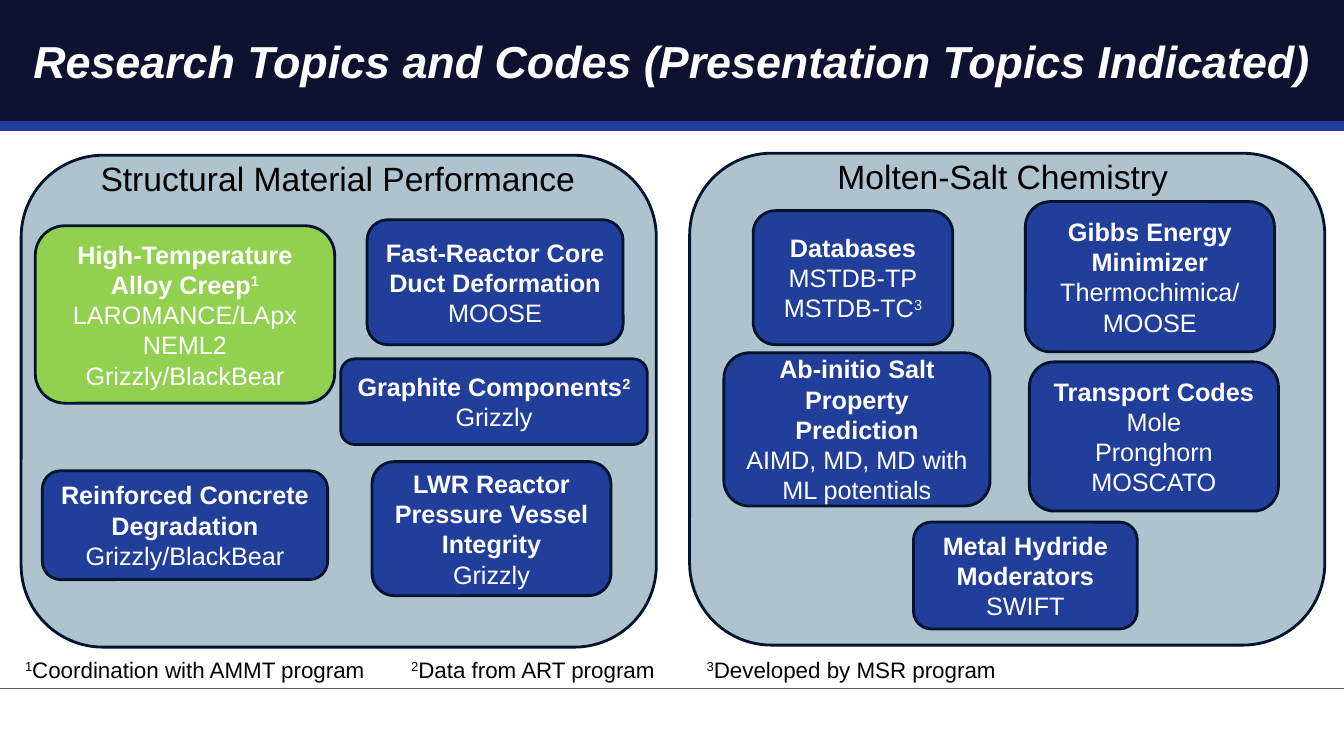
from dataclasses import dataclass
from typing import NamedTuple

from pptx import Presentation
from pptx.dml.color import RGBColor
from pptx.enum.shapes import MSO_CONNECTOR, MSO_SHAPE
from pptx.enum.text import MSO_ANCHOR, PP_ALIGN
from pptx.oxml.ns import qn
from pptx.shapes.autoshape import Shape
from pptx.slide import Slide
from pptx.text.text import TextFrame
from pptx.util import Inches, Pt
from lxml.etree import SubElement

# Grid of tenth-inch cells
CELL = Inches(0.1)
COLS, ROWS = 133.3, 75


@dataclass(frozen=True)
class Theme:
    font: str = "Arial"
    navy: str = "0E1130"
    blue: str = "213E9A"
    green: str = "92D050"
    panel: str = "AEC3CE"
    edge: str = "00152D"
    rule: str = "595959"
    white: str = "FFFFFF"
    black: str = "000000"
    title: int = 32
    head: int = 24
    body: int = 18
    note: int = 16


THEME = Theme()


class Area(NamedTuple):
    col: float
    row: float
    wide: float
    high: float


class Piece(NamedTuple):
    text: str
    bold: bool = False
    raised: bool = False


class Style(NamedTuple):
    size: int
    color: str
    align: PP_ALIGN = PP_ALIGN.LEFT
    slant: bool = False


Lines = list[list[Piece]]


@dataclass(frozen=True)
class Topic:
    area: Area
    lines: Lines
    fill: str = THEME.blue


@dataclass(frozen=True)
class Panel:
    area: Area
    label: Area
    name: str
    topics: list[Topic]


class Note(NamedTuple):
    mark: str
    text: str
    area: Area


def strong(text: str) -> Piece:
    return Piece(text, bold=True)


PANELS = [
    Panel(Area(2.1, 15.4, 63, 48.8), Area(8.3, 15.2, 50.4, 5), "Structural Material Performance", [
        Topic(Area(3.5, 22.4, 29.7, 17.6),
              [[strong("High-Temperature Alloy Creep"), Piece("1", True, True)],
               [Piece("LAROMANCE/LApx\nNEML2\nGrizzly/BlackBear")]], THEME.green),
        Topic(Area(4.2, 46.7, 28.3, 10.8),
              [[strong("Reinforced Concrete Degradation\n"), Piece("Grizzly/BlackBear")]]),
        Topic(Area(33.8, 35.6, 30.4, 8.5),
              [[strong("Graphite Components"), Piece("2\n", True, True), Piece("Grizzly")]]),
        Topic(Area(36.4, 21.8, 25.4, 12.4),
              [[strong("Fast-Reactor Core Duct Deformation")], [Piece("MOOSE")]]),
        Topic(Area(36.9, 45.8, 23.7, 13.3),
              [[strong("LWR Reactor Pressure Vessel Integrity\n"), Piece("Grizzly")]]),
    ]),
    Panel(Area(68.4, 15.2, 63, 48.8), Area(73.9, 15, 51.1, 5), "Molten-Salt Chemistry", [
        Topic(Area(74.7, 20.9, 19.8, 13.3),
              [[strong("Databases\n"), Piece("MSTDB-TP")],
               [Piece("MSTDB-TC"), Piece("3", raised=True)]]),
        Topic(Area(101.7, 20, 24.7, 14.9),
              [[strong("Gibbs Energy Minimizer\n"), Piece("Thermochimica/")], [Piece("MOOSE")]]),
        Topic(Area(102.1, 35.9, 24.7, 14.8),
              [[strong("Transport Codes\n"), Piece("Mole")], [Piece("Pronghorn\nMOSCATO")]]),
        Topic(Area(71.8, 35, 26.4, 15.2),
              [[strong("Ab-initio Salt Property Prediction")],
               [Piece("AIMD, MD, MD with ML potentials")]]),
        Topic(Area(90.6, 51.8, 22.2, 10.6),
              [[strong("Metal Hydride Moderators\n"), Piece("SWIFT")]]),
    ]),
]

NOTES = [
    Note("1", "Coordination with AMMT program", Area(1.5, 64.6, 37.3, 3.7)),
    Note("2", "Data from ART program", Area(39.8, 64.6, 27.7, 3.7)),
    Note("3", "Developed by MSR program", Area(69.1, 64.6, 31.8, 3.7)),
]


def cells(*counts: float) -> list[int]:
    return [round(count * CELL) for count in counts]


def write(frame: TextFrame, lines: Lines, style: Style) -> None:
    for index, line in enumerate(lines):
        para = frame.add_paragraph() if index else frame.paragraphs[0]
        para.alignment = style.align
        for piece in line:
            for part, text in enumerate(piece.text.split("\n")):
                if part:
                    para.add_line_break()
                if not text:
                    continue
                run = para.add_run()
                run.text = text
                font = run.font
                font.name, font.size = THEME.font, Pt(style.size)
                font.bold, font.italic = piece.bold, style.slant
                font.color.rgb = RGBColor.from_string(style.color)
                if piece.raised:
                    font._element.set("baseline", "30000")


def block(slide: Slide, kind: MSO_SHAPE, area: Area, fill: str, edge: str | None = None) -> Shape:
    shape = slide.shapes.add_shape(kind, *cells(*area))
    shape.shadow.inherit = False
    shape.fill.solid()
    shape.fill.fore_color.rgb = RGBColor.from_string(fill)
    if edge:
        shape.line.color.rgb = RGBColor.from_string(edge)
        shape.line.width = Pt(2)
    else:
        shape.line.fill.background()
    return shape


def rule(slide: Slide, row: float, color: str, width: float) -> None:
    line = slide.shapes.add_connector(MSO_CONNECTOR.STRAIGHT, *cells(0, row, COLS, row))
    line.line.color.rgb = RGBColor.from_string(color)
    line.line.width = Pt(width)
    SubElement(line.element.spPr, qn("a:effectLst"))


def label(slide: Slide, area: Area, line: list[Piece], style: Style, wrap: bool) -> None:
    frame = slide.shapes.add_textbox(*cells(*area)).text_frame
    frame.word_wrap = wrap
    write(frame, [line], style)


def header(slide: Slide) -> None:
    band = block(slide, MSO_SHAPE.RECTANGLE, Area(0, 0, COLS, 12.5), THEME.navy)
    title = slide.shapes.title
    title.element.addprevious(band.element)
    title.left, title.top, title.width, title.height = cells(3.3, 3.3, 127.8, 7.5)
    frame = title.text_frame
    frame.margin_left = frame.margin_right = frame.margin_top = frame.margin_bottom = 0
    frame.vertical_anchor = MSO_ANCHOR.TOP
    frame.word_wrap = True
    write(frame, [[strong("Research Topics and Codes (Presentation Topics Indicated)")]],
          Style(THEME.title, THEME.white, slant=True))


def main() -> None:
    deck = Presentation()
    deck.slide_width, deck.slide_height = cells(COLS, ROWS)
    slide = deck.slides.add_slide(deck.slide_layouts[5])

    # Title band and rules
    header(slide)
    rule(slide, 12.5, THEME.blue, 6.75)
    rule(slide, 68.3, THEME.rule, 1)

    # Panels with their topics
    head = Style(THEME.head, THEME.black, PP_ALIGN.CENTER)
    body = Style(THEME.body, THEME.white, PP_ALIGN.CENTER)
    for panel in PANELS:
        block(slide, MSO_SHAPE.ROUNDED_RECTANGLE, panel.area, THEME.panel, THEME.edge)
        label(slide, panel.label, [Piece(panel.name)], head, True)
        for topic in panel.topics:
            box = block(slide, MSO_SHAPE.ROUNDED_RECTANGLE, topic.area, topic.fill, THEME.edge)
            box.text_frame.vertical_anchor = MSO_ANCHOR.MIDDLE
            write(box.text_frame, topic.lines, body)

    # Footnotes
    for note in NOTES:
        label(slide, note.area, [Piece(note.mark, raised=True), Piece(note.text)],
              Style(THEME.note, THEME.black), False)

    deck.save("out.pptx")


if __name__ == "__main__":
    main()
